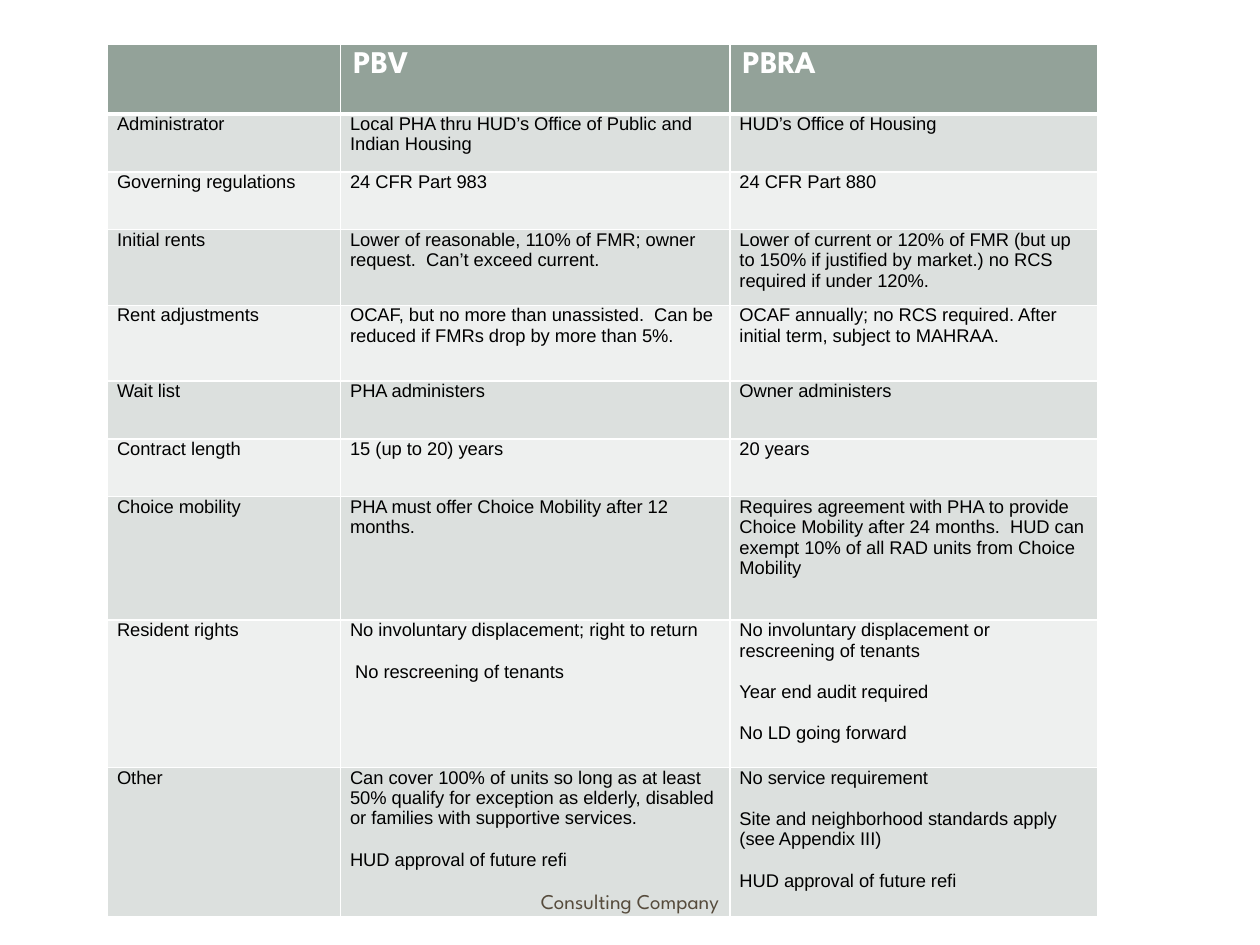
from lxml import etree
from pptx import Presentation
from pptx.dml.color import RGBColor
from pptx.enum.text import MSO_ANCHOR, PP_ALIGN
from pptx.oxml.ns import qn
from pptx.util import Pt

MIDDLE = MSO_ANCHOR.MIDDLE
CENTER = PP_ALIGN.CENTER

COLORS = {
    "header": "93A299",
    "dark_band": "DCE0DE",
    "light_band": "EEF0EF",
    "white": "FFFFFF",
    "text": "000000",
    "footer": "564B3C",
}
HEADING_FONT = "League Spartan"
BODY_FONT = "Arial"

COLUMN_WIDTHS = [133.2, 222.5, 210.2]
HEADER_HEIGHT = 39.6
HEADINGS = ["", "PBV", "PBRA"]

# Row height, then one list of paragraphs for each column
ROWS = [
    (33.1, ["Administrator"],
     ["Local PHA thru HUD’s Office of Public and Indian Housing"],
     ["HUD’s Office of Housing"]),
    (33.1, ["Governing regulations"], ["24 CFR Part 983"], ["24 CFR Part 880"]),
    (43.2, ["Initial rents"],
     ["Lower of reasonable, 110% of FMR; owner request.  Can’t exceed current."],
     ["Lower of current or 120% of FMR (but up to 150% if justified by market.) "
      "no RCS required if under 120%."]),
    (43.2, ["Rent adjustments"],
     ["OCAF, but no more than unassisted.  Can be reduced if FMRs drop by more than 5%."],
     ["OCAF annually; no RCS required. After initial term, subject to MAHRAA."]),
    (33.1, ["Wait list"], ["PHA administers"], ["Owner administers"]),
    (33.1, ["Contract length"], ["15 (up to 20) years"], ["20 years"]),
    (70.5, ["Choice mobility"],
     ["PHA must offer Choice Mobility after 12 months."],
     ["Requires agreement with PHA to provide Choice Mobility after 24 months.  "
      "HUD can exempt 10% of all RAD units from Choice Mobility"]),
    (84.3, ["Resident rights"],
     ["No involuntary displacement; right to return", " No rescreening of tenants"],
     ["No involuntary displacement or rescreening of tenants",
      "Year end audit required", "No LD going forward"]),
    (85, ["Other"],
     ["Can cover 100% of units so long as at least 50% qualify for exception as "
      "elderly, disabled or families with supportive services.",
      "HUD approval of future refi"],
     ["No service requirement",
      "Site and neighborhood standards apply (see Appendix III)",
      "HUD approval of future refi"]),
]


def set_font(para, name, size, color, bold=False):
    font = para.font
    font.name = name
    font.size = Pt(size)
    font.bold = bold
    font.color.rgb = RGBColor.from_string(COLORS[color])


def style_cell(cell, fill, top=1, bottom=1):
    """Give the cell white borders and a solid fill."""
    properties = cell._tc.get_or_add_tcPr()
    for side, width in (("L", 1), ("R", 1), ("T", top), ("B", bottom)):
        line = etree.SubElement(properties, qn(f"a:ln{side}"), w=str(Pt(width)))
        solid = etree.SubElement(line, qn("a:solidFill"))
        etree.SubElement(solid, qn("a:srgbClr"), val=COLORS["white"])
    cell.fill.solid()
    cell.fill.fore_color.rgb = RGBColor.from_string(COLORS[fill])


def fill_body_cell(cell, lines):
    cell.margin_left = cell.margin_right = Pt(5.4)
    cell.margin_top = cell.margin_bottom = 0
    cell.text = "\n".join(lines)
    for para in cell.text_frame.paragraphs:
        para.space_before = para.space_after = Pt(6)
        set_font(para, BODY_FONT, 10.5, "text")


def add_comparison_table(page, left, top, width, height):
    frame = page.shapes.add_table(len(ROWS) + 1, len(HEADINGS),
                                  Pt(left), Pt(top), Pt(width), Pt(height))
    table = frame.table
    for column, share in zip(table.columns, COLUMN_WIDTHS):
        column.width = Pt(width * share / sum(COLUMN_WIDTHS))
    row_heights = [HEADER_HEIGHT] + [row[0] for row in ROWS]
    for row, share in zip(table.rows, row_heights):
        row.height = Pt(height * share / sum(row_heights))

    # Header row
    for index, heading in enumerate(HEADINGS):
        cell = table.cell(0, index)
        style_cell(cell, "header", bottom=3)
        cell.text = heading
        set_font(cell.text_frame.paragraphs[0], HEADING_FONT, 18, "white", bold=True)

    # Banded body rows
    for number, (_, *columns) in enumerate(ROWS, start=1):
        band = "dark_band" if number % 2 else "light_band"
        for index, lines in enumerate(columns):
            cell = table.cell(number, index)
            style_cell(cell, band, top=3 if number == 1 else 1)
            fill_body_cell(cell, lines)


def add_footer(page, left, top, width, height):
    box = page.shapes.add_textbox(Pt(left), Pt(top), Pt(width), Pt(height))
    frame = box.text_frame
    frame.word_wrap = True
    frame.vertical_anchor = MIDDLE
    para = frame.paragraphs[0]
    para.text = "Consulting Company"
    para.alignment = CENTER
    set_font(para, HEADING_FONT, 12, "footer")


def main():
    deck = Presentation()
    deck.slide_width, deck.slide_height = Pt(720), Pt(540)
    page = deck.slides.add_slide(deck.slide_layouts[6])
    add_comparison_table(page, 61.5, 25.5, 565.9, 498.2)
    add_footer(page, 246, 500.4, 228, 28.8)
    deck.save("out.pptx")


if __name__ == "__main__":
    main()
